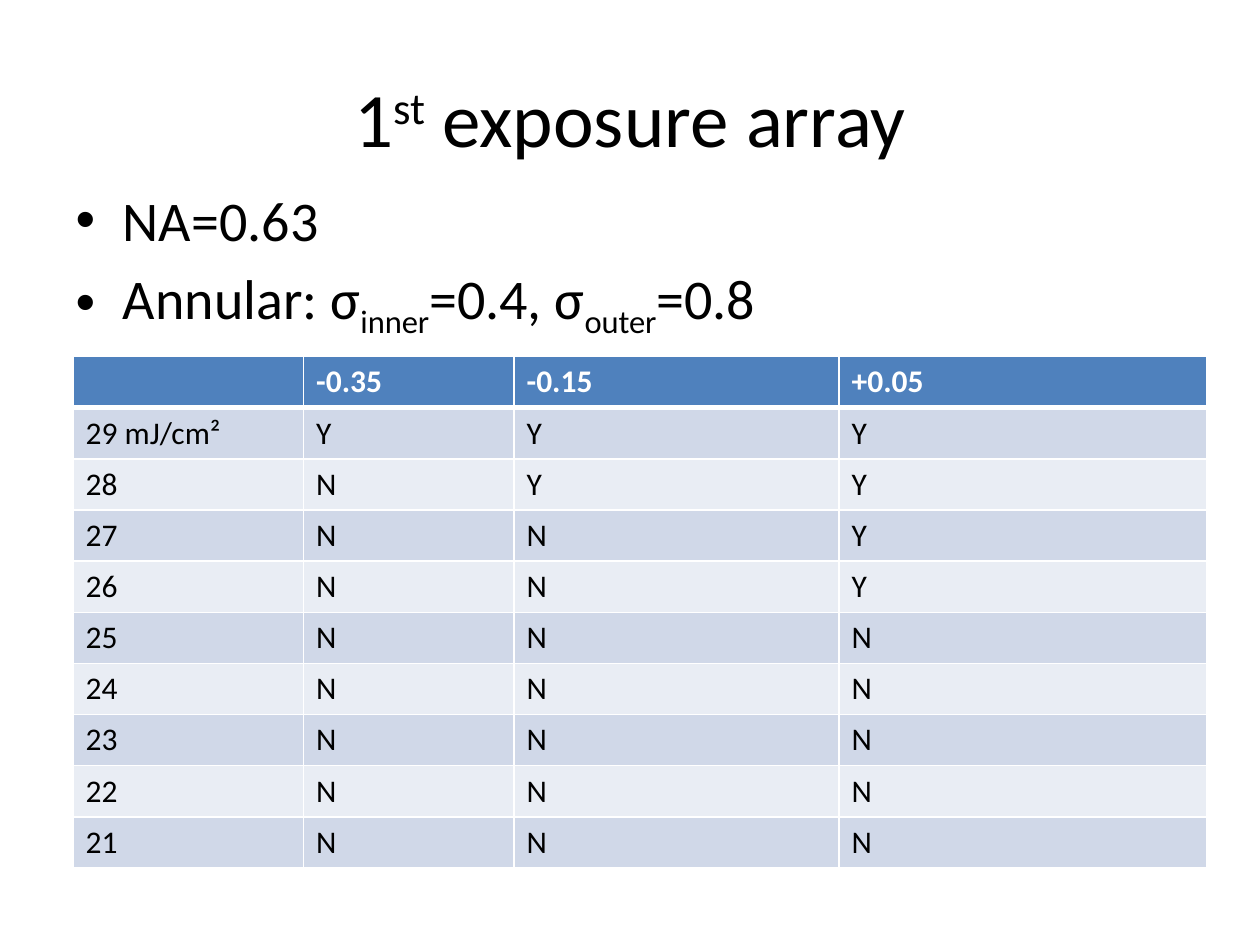
import pptx
import pptx.dml.color
import pptx.enum.text
import pptx.oxml
import pptx.oxml.ns
import pptx.util
from pptx.util import Inches

COLORS = {
    "text": "000000",
    "header": "4F81BD",
    "band_dark": "D0D8E8",
    "band_light": "E9EDF4",
    "white": "FFFFFF",
}
FONT = "Calibri"
SUPERSCRIPT, SUBSCRIPT = 30000, -25000
TITLE = [("1", 0), ("st", SUPERSCRIPT), (" exposure array", 0)]
SETTINGS = [
    [("NA=0.63", 0)],
    [("Annular: σ", 0), ("inner", SUBSCRIPT), ("=0.4, σ", 0),
     ("outer", SUBSCRIPT), ("=0.8", 0)],
]
FOCUS_HEADER = ["", "-0.35", "-0.15", "+0.05"]
DOSE_RESULTS = [
    ("29 mJ/cm²", "YYY"), ("28", "NYY"), ("27", "NNY"),
    ("26", "NNY"), ("25", "NNN"), ("24", "NNN"),
    ("23", "NNN"), ("22", "NNN"), ("21", "NNN"),
]
COLUMN_WIDTHS = [1.83, 1.67, 2.58, 2.92]
ROW_HEIGHT = 0.406


def rgb(name):
    """Return the named colour."""
    return pptx.dml.color.RGBColor.from_string(COLORS[name])


def style_font(paragraph, size, color="text", bold=False):
    """Set the font of a whole paragraph."""
    font = paragraph.font
    font.name, font.size, font.bold = FONT, pptx.util.Pt(size), bold
    font.color.rgb = rgb(color)


def add_runs(paragraph, runs):
    """Add runs of (text, baseline shift) to a paragraph."""
    for text, baseline in runs:
        run = paragraph.add_run()
        run.text = text
        if baseline:
            run.font._element.set("baseline", str(baseline))


def place(shape, left, top, width, height):
    """Move a placeholder to a box in inches and keep its text size fixed."""
    shape.left, shape.top = Inches(left), Inches(top)
    shape.width, shape.height = Inches(width), Inches(height)
    shape.text_frame.auto_size = pptx.enum.text.MSO_AUTO_SIZE.NONE


def fill_title(shape, left, top, width, height):
    """Write the centred slide title."""
    place(shape, left, top, width, height)
    shape.text_frame.vertical_anchor = pptx.enum.text.MSO_ANCHOR.MIDDLE
    paragraph = shape.text_frame.paragraphs[0]
    paragraph.alignment = pptx.enum.text.PP_ALIGN.CENTER
    style_font(paragraph, 44)
    add_runs(paragraph, TITLE)


def fill_settings(shape, left, top, width, height):
    """Write the bulleted exposure settings."""
    place(shape, left, top, width, height)
    frame = shape.text_frame
    for index, runs in enumerate(SETTINGS):
        paragraph = frame.add_paragraph() if index else frame.paragraphs[0]
        style_font(paragraph, 32)
        add_runs(paragraph, runs)


def set_borders(cell, bottom_width):
    """Draw white cell borders, with the given bottom width in points."""
    properties = cell._tc.get_or_add_tcPr()
    for side, width in (("L", 1), ("R", 1), ("T", 1), ("B", bottom_width)):
        properties.append(pptx.oxml.parse_xml(
            f'<a:ln{side} {pptx.oxml.ns.nsdecls("a")} w="{pptx.util.Pt(width)}">'
            f'<a:solidFill><a:srgbClr val="{COLORS["white"]}"/></a:solidFill>'
            f'</a:ln{side}>'))


def add_exposure_table(slide, left, top):
    """Add the dose by focus table at a position in inches."""
    rows = [FOCUS_HEADER] + [[dose, *results] for dose, results in DOSE_RESULTS]
    table = slide.shapes.add_table(
        len(rows), len(COLUMN_WIDTHS), Inches(left), Inches(top),
        Inches(sum(COLUMN_WIDTHS)), Inches(ROW_HEIGHT * len(rows))).table
    for column, width in zip(table.columns, COLUMN_WIDTHS):
        column.width = Inches(width)
    for row_index, values in enumerate(rows):
        is_header = row_index == 0
        band = "band_dark" if row_index % 2 else "band_light"
        for column_index, value in enumerate(values):
            cell = table.cell(row_index, column_index)
            set_borders(cell, 3 if is_header or row_index == 0 else 1)
            cell.fill.solid()
            cell.fill.fore_color.rgb = rgb("header" if is_header else band)
            cell.text = value
            style_font(cell.text_frame.paragraphs[0], 18,
                       "white" if is_header else "text", is_header)


def main():
    """Build and save the presentation."""
    presentation = pptx.Presentation()
    presentation.slide_width, presentation.slide_height = Inches(10), Inches(7.5)
    slide = presentation.slides.add_slide(presentation.slide_layouts[1])
    fill_title(slide.shapes.title, 0.5, 0.3, 9, 1.25)
    fill_settings(slide.placeholders[1], 0.5, 1.42, 9, 1.42)
    add_exposure_table(slide, 0.58, 2.83)
    presentation.save("out.pptx")


if __name__ == "__main__":
    main()
